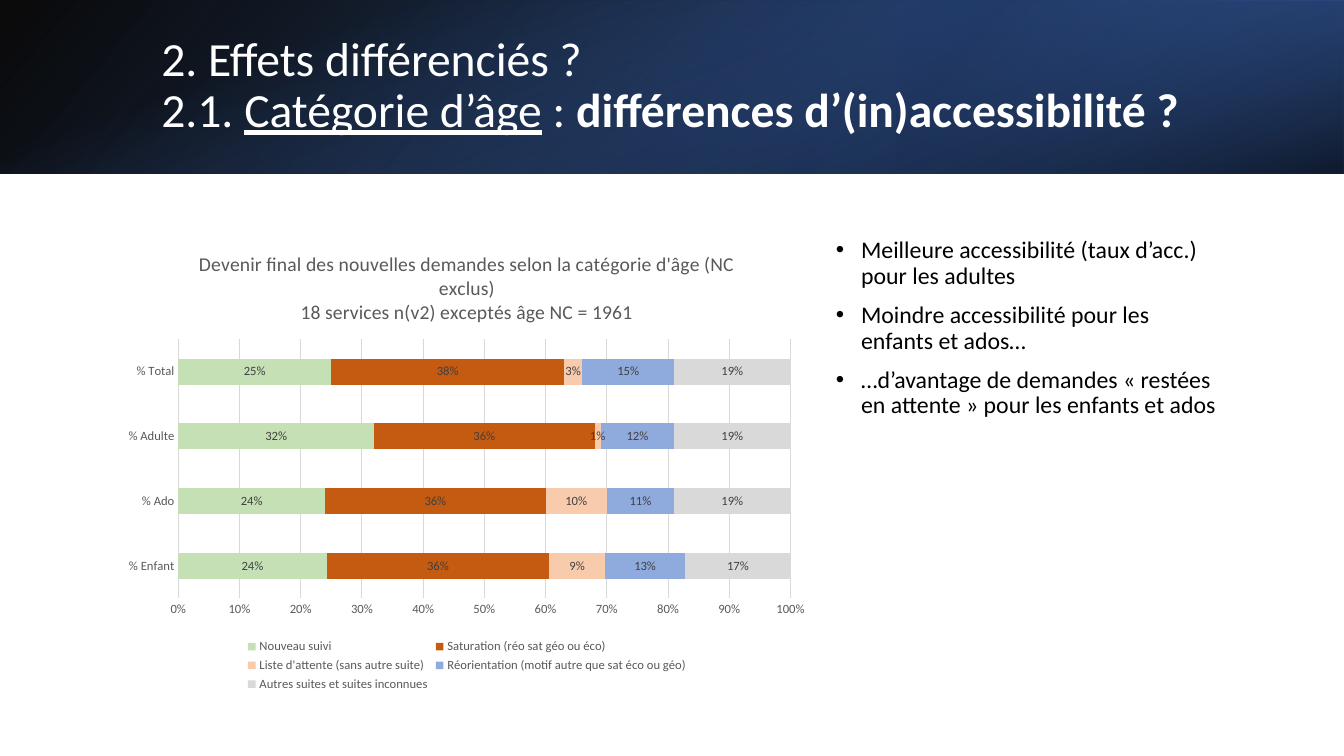
from dataclasses import dataclass

from pptx import Presentation
from pptx.chart.data import CategoryChartData
from pptx.dml.color import RGBColor
from pptx.enum.chart import (XL_CHART_TYPE as ChartType, XL_LABEL_POSITION as LabelPosition,
                             XL_LEGEND_POSITION as LegendPosition, XL_TICK_MARK as TickMark)
from pptx.enum.shapes import MSO_SHAPE as ShapeKind
from pptx.enum.text import MSO_ANCHOR as Anchor, MSO_AUTO_SIZE as AutoSize, PP_ALIGN as Align
from pptx.oxml import parse_xml
from pptx.oxml.ns import nsdecls, qn
from pptx.util import Inches, Pt


@dataclass(frozen=True)
class Theme:
    font: str = "Calibri"
    title_size: float = 34
    body_size: float = 17
    chart_title_size: float = 14
    chart_size: float = 9
    title_color: str = "FFFFFF"
    body_color: str = "000000"
    chart_color: str = "595959"
    label_color: str = "404040"
    grid_color: str = "D9D9D9"
    black: str = "000000"
    navy: str = "203864"
    blue: str = "2F5597"
    bright_blue: str = "4472C4"
    series_colors: tuple = ("C5E0B4", "C55A11", "F8CBAD", "8FAADC", "D9D9D9")


def apply_format(target, **values):
    for name, value in values.items():
        setattr(target, name, value)


def place(shape, left, top, width, height):
    apply_format(shape, left=Inches(left), top=Inches(top),
                 width=Inches(width), height=Inches(height))


class SlideBuilder:
    def __init__(self, slide, theme):
        self.slide = slide
        self.theme = theme

    def style_font(self, font, size, color, **extra):
        apply_format(font, name=self.theme.font, size=Pt(size), **extra)
        font.color.rgb = RGBColor.from_string(color)

    def style_line(self, line):
        line.color.rgb = RGBColor.from_string(self.theme.grid_color)
        line.width = Pt(0.75)

    def gradient_band(self, box, stops, angle, rotation=0, flipped=False):
        """Add a rectangle; each stop is (position %, colour, opacity %)."""
        band = self.slide.shapes.add_shape(ShapeKind.RECTANGLE, *map(Inches, box))
        band.shadow.inherit = False
        band.rotation = rotation
        band.line.fill.background()
        band.fill.background()
        properties = band._element.spPr
        if flipped:
            properties.find(qn("a:xfrm")).set("flipH", "1")
        stop_xml = "".join(
            f'<a:gs pos="{position * 1000}"><a:srgbClr val="{color}">'
            f'<a:alpha val="{opacity * 1000}"/></a:srgbClr></a:gs>'
            for position, color, opacity in stops)
        gradient = parse_xml(
            f'<a:gradFill {nsdecls("a")} rotWithShape="1"><a:gsLst>{stop_xml}</a:gsLst>'
            f'<a:lin ang="{angle * 60000}" scaled="0"/></a:gradFill>')
        properties.replace(properties.find(qn("a:noFill")), gradient)

    def title(self, box, lines):
        """Fill the title; each line is a list of (text, font extras)."""
        title = self.slide.shapes.title
        place(title, *box)
        apply_format(title.text_frame, word_wrap=True, auto_size=AutoSize.NONE,
                     vertical_anchor=Anchor.MIDDLE)
        paragraph = title.text_frame.paragraphs[0]
        apply_format(paragraph, alignment=Align.LEFT, line_spacing=0.9)
        for index, line in enumerate(lines):
            if index:
                paragraph.add_line_break()
            for text, extra in line:
                run = paragraph.add_run()
                run.text = text
                self.style_font(run.font, self.theme.title_size, self.theme.title_color, **extra)

    def bullets(self, box, items):
        body = self.slide.placeholders[1]
        place(body, *box)
        frame = body.text_frame
        apply_format(frame, word_wrap=True, auto_size=AutoSize.NONE, vertical_anchor=Anchor.TOP)
        for index, text in enumerate(items):
            paragraph = frame.add_paragraph() if index else frame.paragraphs[0]
            properties = paragraph._p.get_or_add_pPr()
            properties.set("marL", str(Inches(0.25)))
            properties.set("indent", str(Inches(-0.25)))
            properties.append(parse_xml(f'<a:buChar {nsdecls("a")} char="•"/>'))
            apply_format(paragraph, alignment=Align.LEFT, line_spacing=0.9,
                         space_before=Pt(9.6 if index else 0))
            run = paragraph.add_run()
            run.text = text
            self.style_font(run.font, self.theme.body_size, self.theme.body_color)

    def stacked_chart(self, box, title_lines, categories, series, plot_area):
        theme = self.theme
        data = CategoryChartData(number_format="0%")
        data.categories = categories
        for name, values in series.items():
            data.add_series(name, values)
        chart = self.slide.shapes.add_chart(
            ChartType.BAR_STACKED_100, *map(Inches, box), data).chart
        self.style_font(chart.font, theme.chart_size, theme.chart_color)

        chart.has_title = True
        frame = chart.chart_title.text_frame
        for index, text in enumerate(title_lines):
            paragraph = frame.add_paragraph() if index else frame.paragraphs[0]
            run = paragraph.add_run()
            run.text = text
            self.style_font(run.font, theme.chart_title_size, theme.chart_color, bold=False)
        chart.chart_title.include_in_layout = False

        chart.has_legend = True
        apply_format(chart.legend, position=LegendPosition.BOTTOM, include_in_layout=False)
        self.style_font(chart.legend.font, theme.chart_size, theme.chart_color)

        for axis in (chart.category_axis, chart.value_axis):
            apply_format(axis, major_tick_mark=TickMark.NONE, minor_tick_mark=TickMark.NONE)
            self.style_font(axis.tick_labels.font, theme.chart_size, theme.chart_color)
        self.style_line(chart.category_axis.format.line)
        value_axis = chart.value_axis
        value_axis.format.line.fill.background()
        self.style_line(value_axis.major_gridlines.format.line)
        apply_format(value_axis.tick_labels, number_format="0%", number_format_is_linked=False)

        plot = chart.plots[0]
        apply_format(plot, gap_width=150, overlap=100, vary_by_categories=False)
        for bars, color in zip(plot.series, theme.series_colors):
            bars.format.fill.solid()
            bars.format.fill.fore_color.rgb = RGBColor.from_string(color)
            labels = bars.data_labels
            apply_format(labels, show_value=True, position=LabelPosition.CENTER,
                         number_format="0%", number_format_is_linked=False)
            self.style_font(labels.font, theme.chart_size, theme.label_color)
        self.fix_plot_area(chart, plot_area)

    def fix_plot_area(self, chart, fractions):
        """Place the inner plot area by fractions of the chart's size."""
        area = chart._chartSpace.chart.plotArea
        for layout in area.findall(qn("c:layout")):
            area.remove(layout)
        sizes = "".join(f'<c:{name} val="{value}"/>' for name, value in zip("xywh", fractions))
        area.insert(0, parse_xml(
            f'<c:layout {nsdecls("c")}><c:manualLayout><c:layoutTarget val="inner"/>'
            f'<c:xMode val="edge"/><c:yMode val="edge"/>{sizes}</c:manualLayout></c:layout>'))


def main():
    presentation = Presentation()
    presentation.slide_width, presentation.slide_height = Inches(13.33), Inches(7.5)
    slide = presentation.slides.add_slide(presentation.slide_layouts[1])
    theme = Theme()
    builder = SlideBuilder(slide, theme)

    builder.gradient_band((0, 0, 13.33, 1.72),
                          [(0, theme.black, 96), (100, theme.blue, 100)], 140, flipped=True)
    builder.gradient_band((8.89, 0, 4.44, 1.72),
                          [(19, theme.navy, 68), (100, theme.bright_blue, 79)], 320,
                          rotation=180, flipped=True)
    builder.gradient_band((5.8, -5.8, 1.72, 13.33),
                          [(23, theme.bright_blue, 0), (99, theme.black, 74)], 340, rotation=90)
    # The bands lie behind the placeholders.
    for placeholder in list(slide.placeholders):
        slide.shapes._spTree.append(placeholder._element)

    builder.title((1.5, 0.38, 10.98, 0.96), [
        [("2. Effets différenciés ?", {})],
        [("2.1. ", {}), ("Catégorie d’âge", {"underline": True}), (" : ", {}),
         ("différences d’(in)accessibilité ?", {"bold": True})],
    ])
    builder.bullets((8.19, 2.31, 4.03, 4.59), [
        "Meilleure accessibilité (taux d’acc.) pour les adultes",
        "Moindre accessibilité pour les enfants et ados…",
        "…d’avantage de demandes « restées en attente » pour les enfants et ados",
    ])
    builder.stacked_chart(
        (1.14, 2.31, 6.98, 4.59),
        ["Devenir final des nouvelles demandes selon la catégorie d'âge (NC exclus)",
         "18 services n(v2) exceptés âge NC = 1961"],
        ["% Enfant", "% Ado", "% Adulte", "% Total"],
        {"Nouveau suivi": (0.24, 0.24, 0.32, 0.25),
         "Saturation (réo sat géo ou éco)": (0.36, 0.36, 0.36, 0.38),
         "Liste d'attente (sans autre suite)": (0.09, 0.10, 0.01, 0.03),
         "Réorientation (motif autre que sat éco ou géo)": (0.13, 0.11, 0.12, 0.15),
         "Autres suites et suites inconnues": (0.17, 0.19, 0.19, 0.19)},
        plot_area=(0.09, 0.23, 0.87, 0.56))
    presentation.save("out.pptx")


if __name__ == "__main__":
    main()
